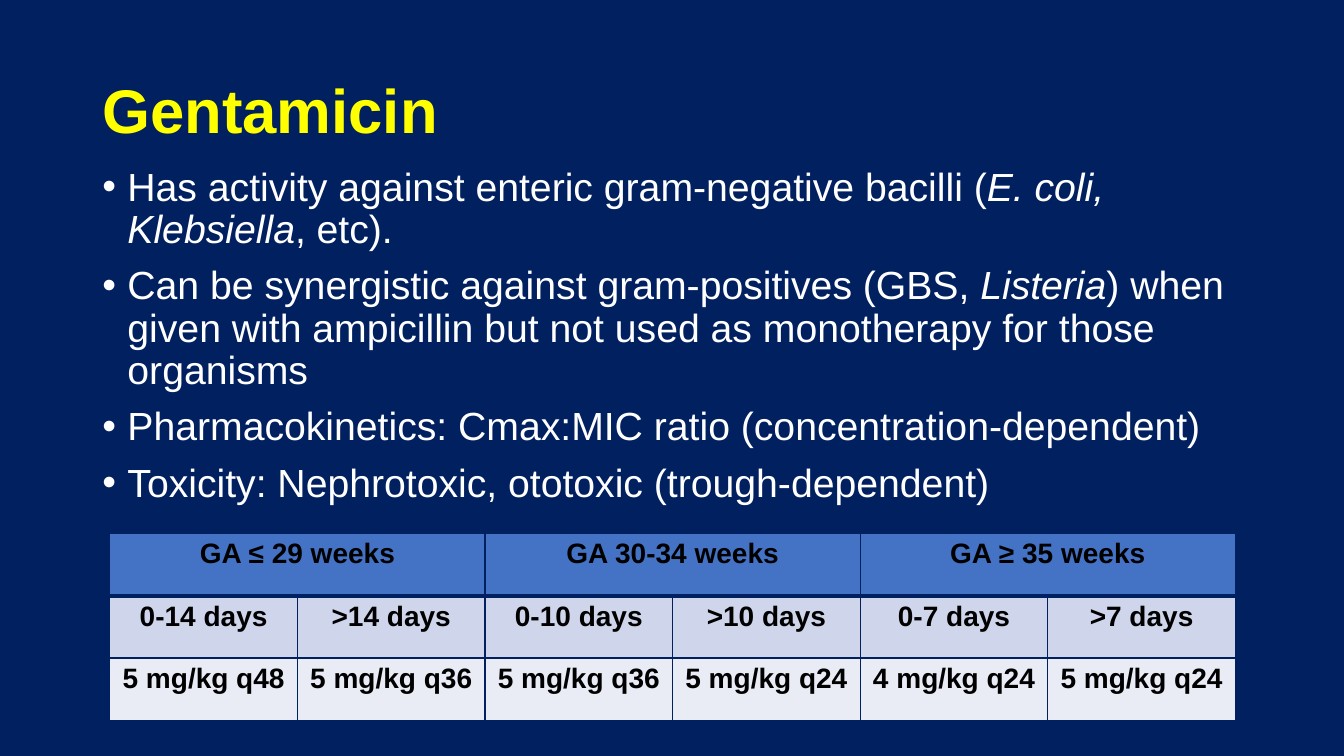
from lxml import etree
from pptx import Presentation, util as u
from pptx.dml.color import RGBColor
from pptx.enum import text
from pptx.oxml import ns

EMU_PER_PX = 6350
NAVY, YELLOW, WHITE, BLACK = "002060", "FFFF00", "FFFFFF", "000000"
ROW_FILLS = ["4472C4", "CFD5EA", "E9EBF5"]

BULLETS = [
    ["Has activity against enteric gram-negative bacilli (", "E. coli, Klebsiella", ", etc)."],
    ["Can be synergistic against gram-positives (GBS, ", "Listeria",
     ") when given with ampicillin but not used as monotherapy for those organisms"],
    ["Pharmacokinetics: Cmax:MIC ratio (concentration-dependent)"],
    ["Toxicity: Nephrotoxic, ototoxic (trough-dependent)"],
]
AGE_GROUPS = ["GA ≤ 29 weeks", "GA 30-34 weeks", "GA ≥ 35 weeks"]
DOSING = [
    ["0-14 days", ">14 days", "0-10 days", ">10 days", "0-7 days", ">7 days"],
    ["5 mg/kg q48", "5 mg/kg q36", "5 mg/kg q36", "5 mg/kg q24", "4 mg/kg q24", "5 mg/kg q24"],
]


def px(value):
    return u.Emu(value * EMU_PER_PX)


def color(hex_code):
    return RGBColor.from_string(hex_code)


class SlideBuilder:
    """Holds the style and the current slide, and adds each kind of element."""

    def __init__(self, presentation, background, font_name="Arial"):
        self.font_name = font_name
        self.slide = presentation.slides.add_slide(presentation.slide_layouts[5])
        fill = self.slide.background.fill
        fill.solid()
        fill.fore_color.rgb = color(background)

    def style(self, run, size, hex_code, bold=False, italic=False):
        font = run.font
        font.name, font.size = self.font_name, u.Pt(size)
        font.bold, font.italic = bold, italic
        font.color.rgb = color(hex_code)

    def title(self, words, left, top, width, height):
        shape = self.slide.shapes.title
        shape.left, shape.top, shape.width, shape.height = map(px, (left, top, width, height))
        frame = shape.text_frame
        frame.text = words
        frame.auto_size = text.MSO_AUTO_SIZE.NONE
        frame.vertical_anchor = text.MSO_ANCHOR.MIDDLE
        paragraph = frame.paragraphs[0]
        paragraph.alignment = text.PP_ALIGN.LEFT
        paragraph.line_spacing = 0.9
        self.style(paragraph.runs[0], 44, YELLOW, bold=True)

    def bullets(self, items, left, top, width, height):
        frame = self.slide.shapes.add_textbox(*map(px, (left, top, width, height))).text_frame
        frame.word_wrap = True
        for index, pieces in enumerate(items):
            paragraph = frame.add_paragraph() if index else frame.paragraphs[0]
            paragraph.line_spacing = 0.9
            paragraph.space_before = u.Pt(10)
            properties = paragraph._p.get_or_add_pPr()
            properties.set("marL", str(px(36)))
            properties.set("indent", str(px(-36)))
            etree.SubElement(properties, ns.qn("a:buFont"), typeface=self.font_name)
            etree.SubElement(properties, ns.qn("a:buChar"), char="•")
            for position, piece in enumerate(pieces):
                run = paragraph.add_run()
                run.text = piece
                self.style(run, 28, WHITE, italic=position % 2 == 1)

    def borders(self, cell, top, bottom):
        properties = cell._tc.get_or_add_tcPr()
        for side, points in (("L", 1), ("R", 1), ("T", top), ("B", bottom)):
            line = etree.SubElement(properties, ns.qn(f"a:ln{side}"), w=str(u.Pt(points)))
            solid = etree.SubElement(line, ns.qn("a:solidFill"))
            etree.SubElement(solid, ns.qn("a:srgbClr"), val=NAVY)

    def table(self, headers, rows, left, top, column_width, row_height):
        row_count, column_count = len(rows) + 1, len(rows[0])
        span = column_count // len(headers)
        table = self.slide.shapes.add_table(
            row_count, column_count, px(left), px(top),
            px(column_width * column_count), px(row_height * row_count)).table
        for column in table.columns:
            column.width = px(column_width)
        for index, row in enumerate(table.rows):
            row.height = px(row_height)
            for cell in row.cells:
                self.borders(cell, 3 if index == 1 else 1, 3 if index == 0 else 1)
                cell.fill.solid()
                cell.fill.fore_color.rgb = color(ROW_FILLS[index])
        for group, words in enumerate(headers):
            first = table.cell(0, group * span)
            first.merge(table.cell(0, group * span + span - 1))
            self.cell_text(first, words)
        for index, values in enumerate(rows, 1):
            for column, words in enumerate(values):
                self.cell_text(table.cell(index, column), words)

    def cell_text(self, cell, words):
        cell.text_frame.text = words
        paragraph = cell.text_frame.paragraphs[0]
        paragraph.alignment = text.PP_ALIGN.CENTER
        self.style(paragraph.runs[0], 20, BLACK, bold=True)


def main():
    presentation = Presentation()
    presentation.slide_width, presentation.slide_height = px(1920), px(1080)
    builder = SlideBuilder(presentation, NAVY)
    builder.title("Gentamicin", 132, 58, 1656, 209)
    builder.bullets(BULLETS, 132, 232, 1656, 685)
    builder.table(AGE_GROUPS, DOSING, 157, 762, 268, 89)
    presentation.save("out.pptx")


if __name__ == "__main__":
    main()
